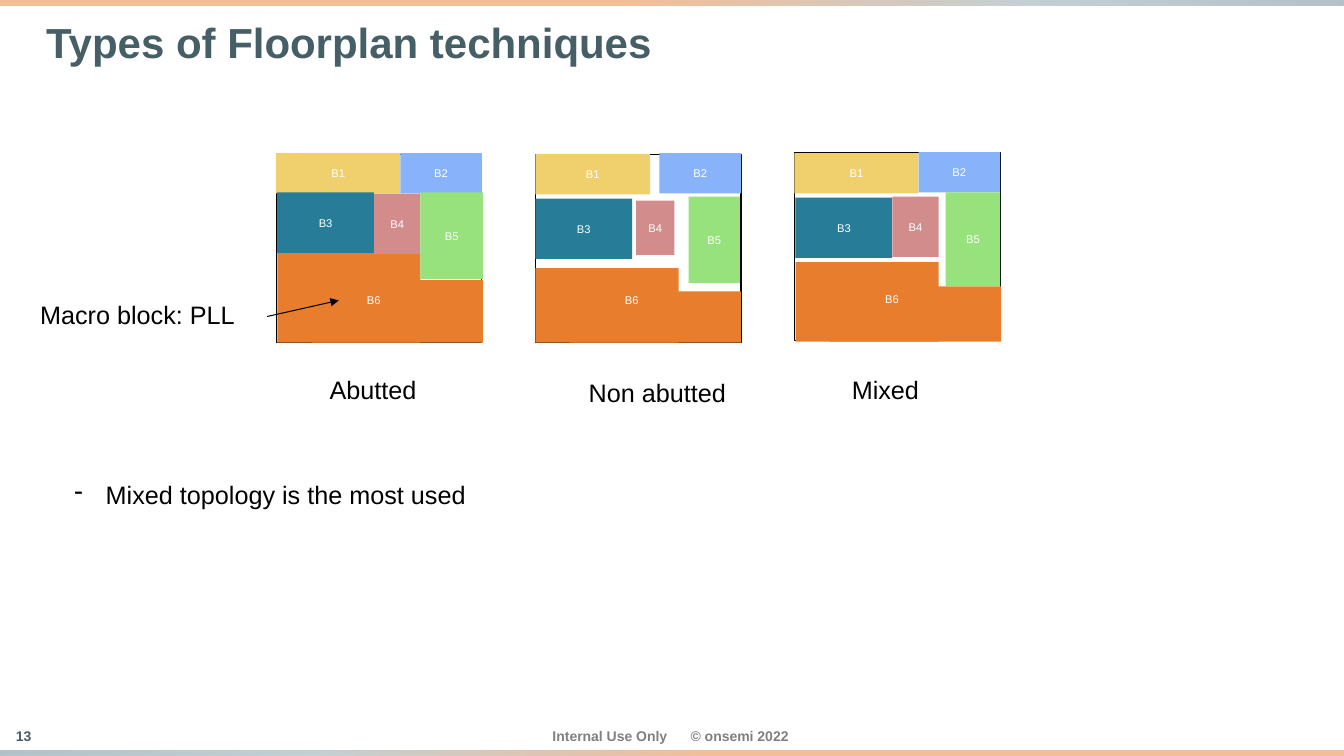
from lxml import etree
from pptx import Presentation
from pptx.dml.color import RGBColor
from pptx.enum import shapes, text
from pptx.oxml import ns
from pptx.util import Inches, Pt

BLACK = RGBColor(0x00, 0x00, 0x00)
WHITE = RGBColor(0xFF, 0xFF, 0xFF)
SLATE = RGBColor(0x46, 0x5E, 0x66)
GRAY = RGBColor(0x80, 0x80, 0x80)
ORANGE = RGBColor(0xE9, 0x7D, 0x2E)
STEEL = RGBColor(0x87, 0xA3, 0xAC)
DEEP_STEEL = RGBColor(0x64, 0x86, 0x92)
YELLOW = RGBColor(0xF0, 0xD0, 0x6D)
BLUE = RGBColor(0x88, 0xB3, 0xFA)
TEAL = RGBColor(0x27, 0x7C, 0x98)
ROSE = RGBColor(0xD2, 0x8C, 0x8C)
GREEN = RGBColor(0x97, 0xE2, 0x7C)

BLOCK_COLORS = {"B1": YELLOW, "B2": BLUE, "B3": TEAL, "B4": ROSE, "B5": GREEN}
BAND_STOPS = ((47, ORANGE), (77, STEEL), (100, DEEP_STEEL))
PLAN_LEFT, PLAN_TOP, PLAN_STEP = 2.74, 1.52, 2.57

FLOORPLANS = [
    {"caption": ("Abutted", 3.17, 3.66, 1.07), "frame_top": 0.01, "b6": (0.8, 1.34),
     "base": [(0.01, 0.99, 1.42, 0.89), (0.35, 1.26, 1.7, 0.62)],
     "blocks": [(0, 0, 1.23, 0.4), (1.23, 0, 0.81, 0.4), (0.01, 0.39, 0.96, 0.6),
                (0.97, 0.4, 0.46, 0.6), (1.43, 0.39, 0.62, 0.86)]},
    {"caption": ("Non abutted", 5.74, 3.69, 1.58), "frame_top": 0.01, "b6": (0.79, 1.34),
     "base": [(0, 1.14, 1.42, 0.74), (0.34, 1.37, 1.7, 0.51)],
     "blocks": [(0, 0.01, 1.14, 0.4), (1.23, 0, 0.81, 0.4), (0, 0.45, 0.96, 0.6),
                (1, 0.47, 0.38, 0.54), (1.52, 0.43, 0.51, 0.86)]},
    {"caption": ("Mixed", 8.35, 3.66, 0.88), "frame_top": -0.01, "b6": (0.8, 1.33),
     "base": [(0.01, 1.08, 1.42, 0.79), (0.35, 1.32, 1.7, 0.55)],
     "blocks": [(0, 0, 1.23, 0.4), (1.23, -0.01, 0.81, 0.4), (0.01, 0.44, 0.96, 0.6),
                (0.97, 0.43, 0.46, 0.6), (1.5, 0.39, 0.54, 0.93)]},
]


class FloorplanSlide:
    font_name = "Arial"

    def __init__(self, slide):
        self.slide = slide

    def add_wording(self, shape, wording, size, color, bold=False,
                    align=text.PP_ALIGN.LEFT):
        paragraph = shape.text_frame.paragraphs[0]
        paragraph.alignment = align
        run = paragraph.add_run()
        run.text = wording
        style = {"name": self.font_name, "size": Pt(size), "bold": bold}
        for attribute, value in style.items():
            setattr(run.font, attribute, value)
        run.font.color.rgb = color
        return paragraph

    def label(self, wording, box, size=18, color=BLACK, bold=False,
              align=text.PP_ALIGN.LEFT, **frame_format):
        shape = self.slide.shapes.add_textbox(*map(Inches, box))
        defaults = {"word_wrap": False, "auto_size": text.MSO_AUTO_SIZE.SHAPE_TO_FIT_TEXT}
        for attribute, value in (defaults | frame_format).items():
            setattr(shape.text_frame, attribute, value)
        return self.add_wording(shape, wording, size, color, bold, align)

    def rectangle(self, box, fill=None, line=None, parent=None):
        owner = (parent or self.slide).shapes
        shape = owner.add_shape(shapes.MSO_SHAPE.RECTANGLE, *map(Inches, box))
        shape.shadow.inherit = False
        if fill is None:
            shape.fill.background()
        else:
            shape.fill.solid()
            shape.fill.fore_color.rgb = fill
        if line is None:
            shape.line.fill.background()
        else:
            shape.line.color.rgb = line
            shape.line.width = Pt(0.75)
        return shape

    def block(self, name, box):
        shape = self.rectangle(box, BLOCK_COLORS[name])
        shape.text_frame.vertical_anchor = text.MSO_ANCHOR.MIDDLE
        self.add_wording(shape, name, 8, WHITE, align=text.PP_ALIGN.CENTER)

    def band(self, top, angle):
        shape = self.rectangle((0, top, 13.33, 0.05))
        shape.fill.gradient()
        shape.fill.gradient_angle = angle
        stops = next(shape._element.spPr.iter(ns.qn("a:gsLst")))
        for stop in list(stops):
            stops.remove(stop)
        for position, color in BAND_STOPS:
            stop = etree.SubElement(stops, ns.qn("a:gs"), pos=str(position * 1000))
            shade = etree.SubElement(stop, ns.qn("a:srgbClr"), val=str(color))
            etree.SubElement(shade, ns.qn("a:alpha"), val="50000")

    def arrow(self, start, end):
        connector = self.slide.shapes.add_connector(
            shapes.MSO_CONNECTOR.STRAIGHT, *map(Inches, start + end))
        connector.line.color.rgb = BLACK
        connector.line.width = Pt(0.75)
        etree.SubElement(connector.line._get_or_add_ln(), ns.qn("a:tailEnd"), type="triangle")
        etree.SubElement(connector._element.spPr, ns.qn("a:effectLst"))

    def bullet(self, wording, box):
        paragraph = self.label(wording, box, word_wrap=True)
        properties = paragraph._p.get_or_add_pPr()
        indent = Inches(0.31)
        properties.set("marL", str(indent))
        properties.set("indent", str(-indent))
        etree.SubElement(properties, ns.qn("a:buChar"), char="-")

    def footer(self, wording, box, color, align, tab=None):
        margins = dict.fromkeys(
            ("margin_left", "margin_top", "margin_right", "margin_bottom"), 0)
        paragraph = self.label(wording, box, 10, color, True, align,
                               vertical_anchor=text.MSO_ANCHOR.MIDDLE, **margins)
        if tab:
            tabs = etree.SubElement(paragraph._p.get_or_add_pPr(), ns.qn("a:tabLst"))
            etree.SubElement(tabs, ns.qn("a:tab"), pos=str(Inches(tab)), algn="l")

    def floorplan(self, plan, left, top):
        def placed(box):
            return (left + box[0], top + box[1], *box[2:])

        self.rectangle(placed((0, plan["frame_top"], 2.04, 1.87)), line=BLACK)
        base = self.slide.shapes.add_group_shape()
        for part in plan["base"]:
            self.rectangle(placed(part), ORANGE, parent=base)
        for name, box in zip(BLOCK_COLORS, plan["blocks"]):
            self.block(name, placed(box))
        self.label("B6", placed((*plan["b6"], 0.34, 0.24)), 8, WHITE)


def main():
    presentation = Presentation()
    presentation.slide_width = Inches(13.33)
    presentation.slide_height = Inches(7.5)
    page = FloorplanSlide(presentation.slides.add_slide(presentation.slide_layouts[6]))

    page.footer("13", (0.15, 7.22, 0.17, 0.17), SLATE, text.PP_ALIGN.CENTER)
    page.footer("Internal Use Only\t© onsemi 2022", (5.48, 7.22, 2.37, 0.17), GRAY,
                text.PP_ALIGN.LEFT, tab=1.37)
    page.band(7.45, 180)
    page.band(0, 0)
    title = page.label("Types of Floorplan techniques", (0.36, 0.16, 12.61, 0.56), 30,
                       SLATE, True, word_wrap=True, auto_size=text.MSO_AUTO_SIZE.NONE,
                       vertical_anchor=text.MSO_ANCHOR.MIDDLE)
    title.line_spacing = 0.92

    for index, plan in enumerate(FLOORPLANS):
        page.floorplan(plan, PLAN_LEFT + index * PLAN_STEP, PLAN_TOP)
    for plan in FLOORPLANS:
        wording, left, top, width = plan["caption"]
        page.label(wording, (left, top, width, 0.4))

    page.label("Macro block: PLL", (0.3, 2.92, 2.15, 0.4))
    page.arrow((2.65, 3.14), (3.36, 2.98))
    page.bullet("Mixed topology is the most used", (0.64, 4.71, 10.72, 0.71))
    presentation.save("out.pptx")


if __name__ == "__main__":
    main()
